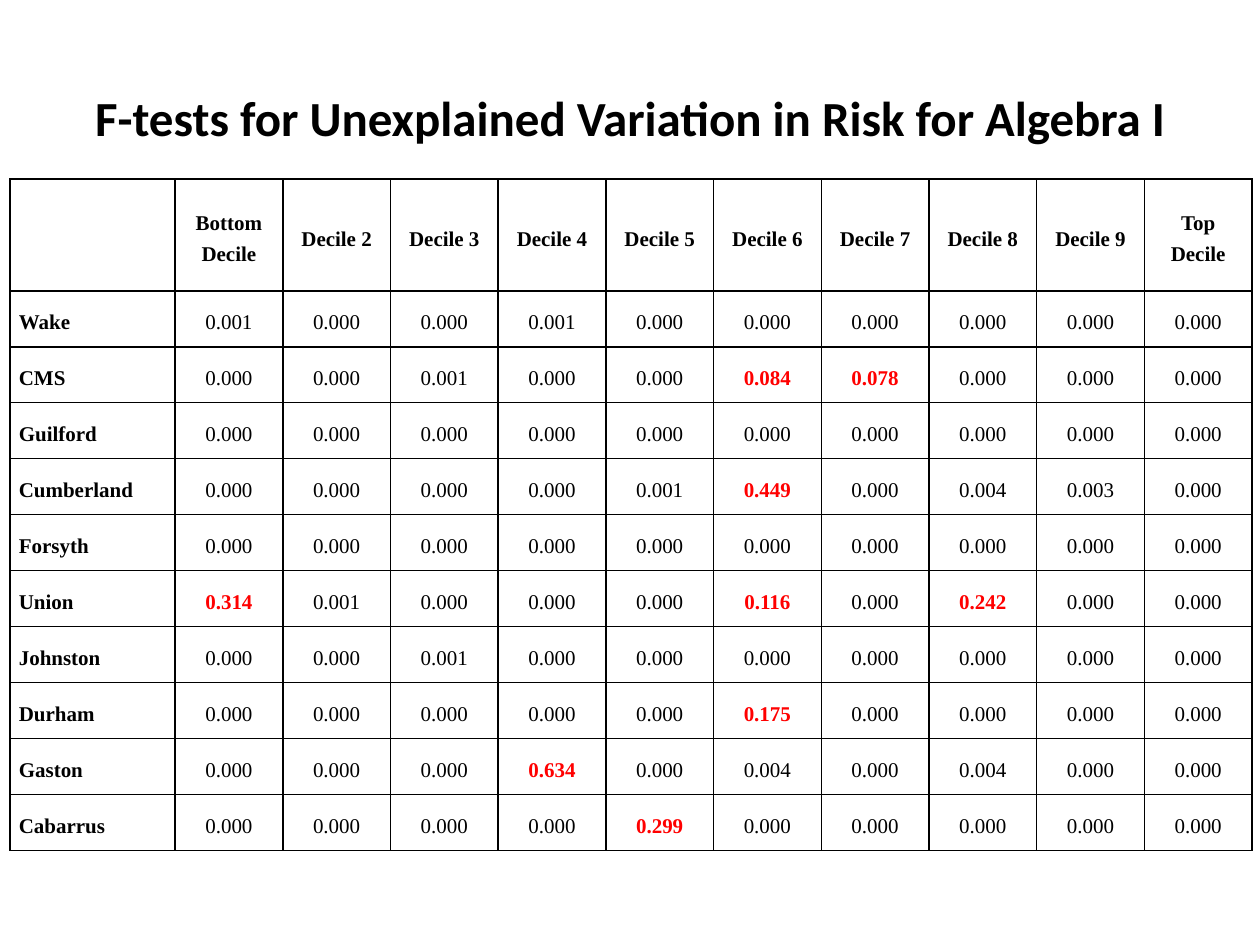
from lxml import etree
from pptx import Presentation
from pptx import util as u
from pptx.dml.color import RGBColor
from pptx.enum import text
from pptx.oxml import ns

BLACK = RGBColor(0x00, 0x00, 0x00)
RED = RGBColor(0xFF, 0x00, 0x00)
SIGNIFICANCE = 0.05

TITLE = "F-tests for Unexplained Variation in Risk for Algebra I"
HEADINGS = ["", "Bottom Decile", *(f"Decile {n}" for n in range(2, 10)), "Top Decile"]
P_VALUES = {
    "Wake": "0.001 0.000 0.000 0.001 0.000 0.000 0.000 0.000 0.000 0.000",
    "CMS": "0.000 0.000 0.001 0.000 0.000 0.084 0.078 0.000 0.000 0.000",
    "Guilford": "0.000 0.000 0.000 0.000 0.000 0.000 0.000 0.000 0.000 0.000",
    "Cumberland": "0.000 0.000 0.000 0.000 0.001 0.449 0.000 0.004 0.003 0.000",
    "Forsyth": "0.000 0.000 0.000 0.000 0.000 0.000 0.000 0.000 0.000 0.000",
    "Union": "0.314 0.001 0.000 0.000 0.000 0.116 0.000 0.242 0.000 0.000",
    "Johnston": "0.000 0.000 0.001 0.000 0.000 0.000 0.000 0.000 0.000 0.000",
    "Durham": "0.000 0.000 0.000 0.000 0.000 0.175 0.000 0.000 0.000 0.000",
    "Gaston": "0.000 0.000 0.000 0.634 0.000 0.004 0.000 0.004 0.000 0.000",
    "Cabarrus": "0.000 0.000 0.000 0.000 0.299 0.000 0.000 0.000 0.000 0.000",
}

LEFT, TOP, WIDTH, HEIGHT = 0.08, 1.42, 9.86, 5.33
NAME_WIDTH = 1.31


def write(frame, content, *, font, size, color=BLACK, bold=False,
          align=text.PP_ALIGN.CENTER, line_spacing=None):
    para = frame.paragraphs[0]
    para.alignment = align
    para.line_spacing = line_spacing
    span = para.add_run()
    span.text = content
    span.font.name = font
    span.font.size = u.Pt(size)
    span.font.bold = bold
    span.font.color.rgb = color


def add_title(page):
    box = page.shapes.title
    box.left, box.top = u.Inches(0.5), u.Inches(0.3)
    box.width, box.height = u.Inches(9), u.Inches(1.25)
    box.text_frame.vertical_anchor = text.MSO_ANCHOR.MIDDLE
    write(box.text_frame, TITLE, font="Calibri", size=28, bold=True)


def outline_cell(cell, color=BLACK, points=1):
    properties = cell._tc.get_or_add_tcPr()
    for side in ("lnL", "lnR", "lnT", "lnB"):
        line = etree.SubElement(properties, ns.qn(f"a:{side}"), w=str(u.Pt(points)))
        fill = etree.SubElement(line, ns.qn("a:solidFill"))
        etree.SubElement(fill, ns.qn("a:srgbClr"), val=str(color))


def format_cell(cell):
    outline_cell(cell)
    cell.fill.background()
    cell.vertical_anchor = text.MSO_ANCHOR.MIDDLE
    cell.margin_left = cell.margin_right = u.Inches(0.07)
    cell.margin_top = cell.margin_bottom = 0


def fill_cell(cell, content, is_heading, is_name):
    """Write a cell; p-values above the significance level are bold red."""
    format_cell(cell)
    if not content:
        return
    is_label = is_heading or is_name
    is_flagged = not is_label and float(content) > SIGNIFICANCE
    write(cell.text_frame, content, font="Times New Roman", size=12,
          color=RED if is_flagged else BLACK, bold=is_label or is_flagged,
          align=text.PP_ALIGN.LEFT if is_name else text.PP_ALIGN.CENTER,
          line_spacing=u.Pt(18))


def add_p_value_table(page):
    rows = [HEADINGS] + [[name, *values.split()] for name, values in P_VALUES.items()]
    table = page.shapes.add_table(
        len(rows), len(HEADINGS), u.Inches(LEFT), u.Inches(TOP),
        u.Inches(WIDTH), u.Inches(HEIGHT)).table
    table.first_row = table.horz_banding = False
    decile_width = (WIDTH - NAME_WIDTH) / (len(HEADINGS) - 1)
    for index, column in enumerate(table.columns):
        column.width = u.Inches(decile_width if index else NAME_WIDTH)
    # The heading row is twice as tall as the others.
    row_height = HEIGHT / (len(rows) + 1)
    for index, row in enumerate(table.rows):
        row.height = u.Inches(row_height if index else 2 * row_height)
    for r, row in enumerate(rows):
        for c, content in enumerate(row):
            fill_cell(table.cell(r, c), content, is_heading=r == 0, is_name=c == 0)


def main():
    deck = Presentation()
    deck.slide_width, deck.slide_height = u.Inches(10), u.Inches(7.5)
    page = deck.slides.add_slide(deck.slide_layouts[5])
    add_title(page)
    add_p_value_table(page)
    deck.save("out.pptx")


if __name__ == "__main__":
    main()
